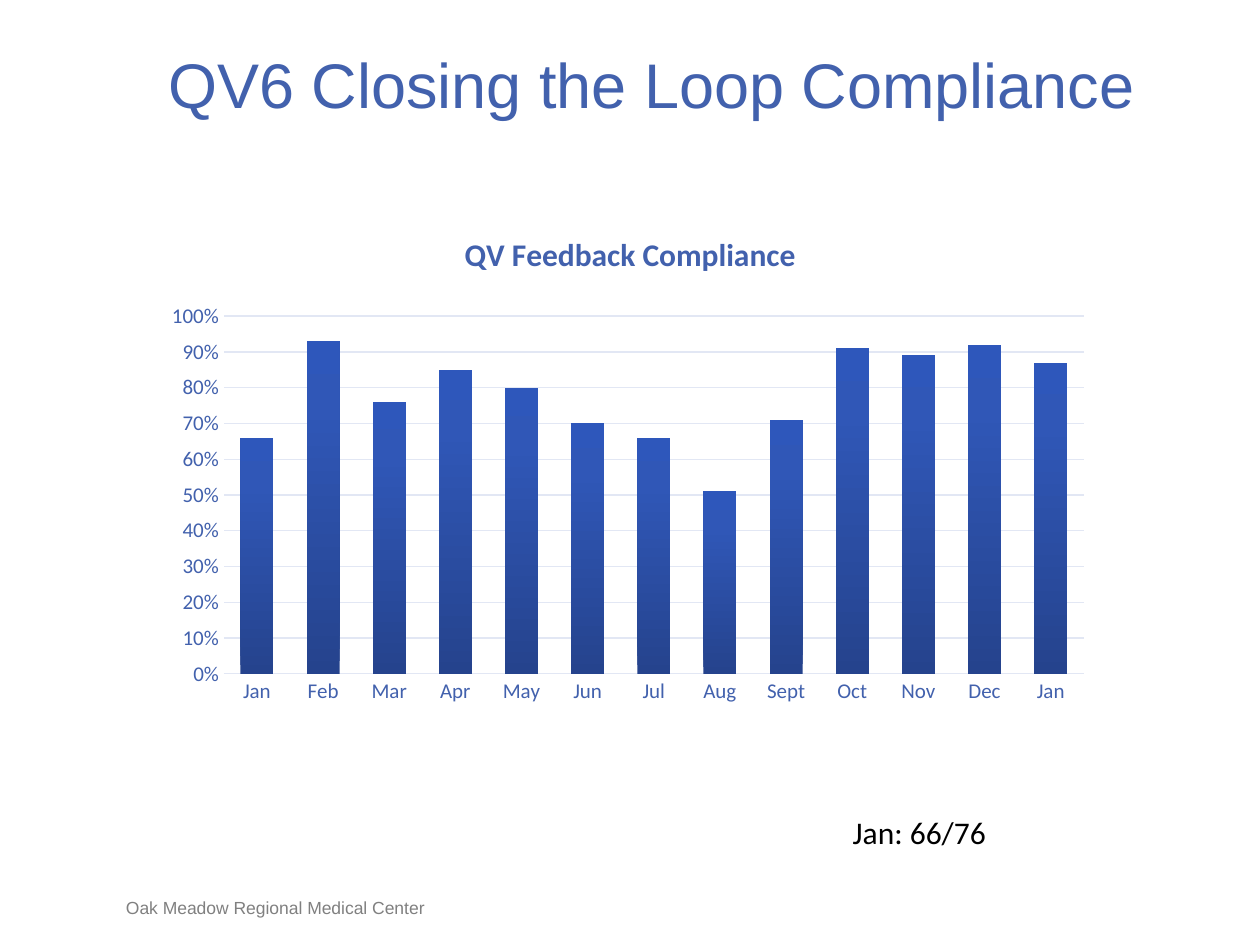
from dataclasses import dataclass

from lxml.etree import SubElement
from pptx import Presentation
from pptx.chart.data import CategoryChartData
from pptx.dml.color import RGBColor
from pptx.enum.chart import XL_CHART_TYPE, XL_TICK_MARK
from pptx.enum.text import MSO_ANCHOR, PP_ALIGN
from pptx.oxml import parse_xml
from pptx.oxml.ns import nsdecls, qn
from pptx.util import Cm, Pt


@dataclass(frozen=True)
class Theme:
    heading_font: str = "Arial"
    body_font: str = "Calibri"
    blue: str = "4261AD"
    grid: str = "E2E7F4"
    grey: str = "808080"
    black: str = "000000"
    bar_stops: tuple = ((0, "25438D"), (80, "3057B7"), (100, "2E57BB"))
    title_size: int = 36
    chart_title_size: int = 18
    note_size: int = 18
    axis_size: int = 12
    footer_size: int = 10


@dataclass(frozen=True)
class Box:
    """A region of the slide, in centimetres."""
    left: float
    top: float
    width: float
    height: float

    def lengths(self):
        return Cm(self.left), Cm(self.top), Cm(self.width), Cm(self.height)


THEME = Theme()
MONTHS = ["Jan", "Feb", "Mar", "Apr", "May", "Jun", "Jul",
          "Aug", "Sept", "Oct", "Nov", "Dec", "Jan"]
COMPLIANCE = [0.66, 0.93, 0.76, 0.85, 0.8, 0.7, 0.66,
              0.51, 0.71, 0.91, 0.89, 0.92, 0.87]


def style_font(font, name, size, color, bold=False):
    font.name = name
    font.size = Pt(size)
    font.bold = bold
    font.color.rgb = RGBColor.from_string(color)


def style_line(line):
    line.color.rgb = RGBColor.from_string(THEME.grid)
    line.width = Pt(0.75)


def add_text(page, box, text, font, size, color, align=PP_ALIGN.LEFT,
             anchor=MSO_ANCHOR.TOP, flush=True):
    """Add one paragraph; flush removes the inner margins."""
    frame = page.shapes.add_textbox(*box.lengths()).text_frame
    frame.word_wrap = True
    frame.vertical_anchor = anchor
    if flush:
        frame.margin_left = frame.margin_right = 0
        frame.margin_top = frame.margin_bottom = 0
    para = frame.paragraphs[0]
    para.text = text
    para.alignment = align
    style_font(para.font, font, size, color)


def fill_bars(fill):
    """Shade the bars upwards from dark to light."""
    fill.gradient()
    fill.gradient_angle = 90
    gradient_stops = fill.gradient_stops[0]._gs.getparent()
    for stop in list(gradient_stops):
        gradient_stops.remove(stop)
    for position, color in THEME.bar_stops:
        stop = SubElement(gradient_stops, qn("a:gs"), pos=str(position * 1000))
        SubElement(stop, qn("a:srgbClr"), val=color)


def place_plot(chart, left, top, width, height):
    """Fix the inner plot area, as fractions of the chart."""
    plot_area = chart._chartSpace.chart.plotArea
    for layout in plot_area.findall(qn("c:layout")):
        plot_area.remove(layout)
    sizes = {"x": left, "y": top, "w": width, "h": height}
    values = "".join(f'<c:{key} val="{size}"/>' for key, size in sizes.items())
    plot_area.insert(0, parse_xml(
        f'<c:layout {nsdecls("c")}><c:manualLayout><c:layoutTarget val="inner"/>'
        f'<c:xMode val="edge"/><c:yMode val="edge"/>{values}'
        f'</c:manualLayout></c:layout>'))


def add_compliance_chart(page, box):
    data = CategoryChartData(number_format="0%")
    data.categories = MONTHS
    data.add_series("Series 1", COMPLIANCE)
    chart = page.shapes.add_chart(
        XL_CHART_TYPE.COLUMN_CLUSTERED, *box.lengths(), data).chart
    style_font(chart.font, THEME.body_font, THEME.footer_size, THEME.black)
    chart.has_legend = False

    chart.has_title = True
    para = chart.chart_title.text_frame.paragraphs[0]
    para.text = "QV Feedback Compliance"
    style_font(para.font, THEME.body_font, THEME.chart_title_size, THEME.blue, True)
    chart.chart_title.include_in_layout = False

    for axis in (chart.category_axis, chart.value_axis):
        axis.major_tick_mark = axis.minor_tick_mark = XL_TICK_MARK.NONE
        style_font(axis.tick_labels.font, THEME.body_font, THEME.axis_size, THEME.blue)
    style_line(chart.category_axis.format.line)

    scale = chart.value_axis
    scale.minimum_scale, scale.maximum_scale, scale.major_unit = 0, 1, 0.1
    scale.tick_labels.number_format = "0%"
    scale.tick_labels.number_format_is_linked = False
    scale.format.line.fill.background()
    style_line(scale.major_gridlines.format.line)

    plot = chart.plots[0]
    plot.gap_width, plot.overlap, plot.vary_by_categories = 100, -24, False
    fill_bars(plot.series[0].format.fill)
    place_plot(chart, 0.07, 0.21, 0.91, 0.71)


def build_compliance_page(page):
    add_text(page, Box(2.54, 18.08, 8.05, 0.43), "Oak Meadow Regional Medical Center",
             THEME.heading_font, THEME.footer_size, THEME.grey,
             anchor=MSO_ANCHOR.BOTTOM)
    add_text(page, Box(2.34, 0.91, 21.59, 1.55), "QV6 Closing the Loop Compliance",
             THEME.heading_font, THEME.title_size, THEME.blue, PP_ALIGN.CENTER)
    add_compliance_chart(page, Box(3.18, 4.24, 19.05, 10.16))
    add_text(page, Box(16.94, 16.26, 6.55, 1.02), "Jan: 66/76",
             THEME.body_font, THEME.note_size, THEME.black, flush=False)


def main():
    deck = Presentation()
    deck.slide_width, deck.slide_height = Cm(25.4), Cm(19.05)
    build_compliance_page(deck.slides.add_slide(deck.slide_layouts[6]))
    deck.save("out.pptx")


if __name__ == "__main__":
    main()
